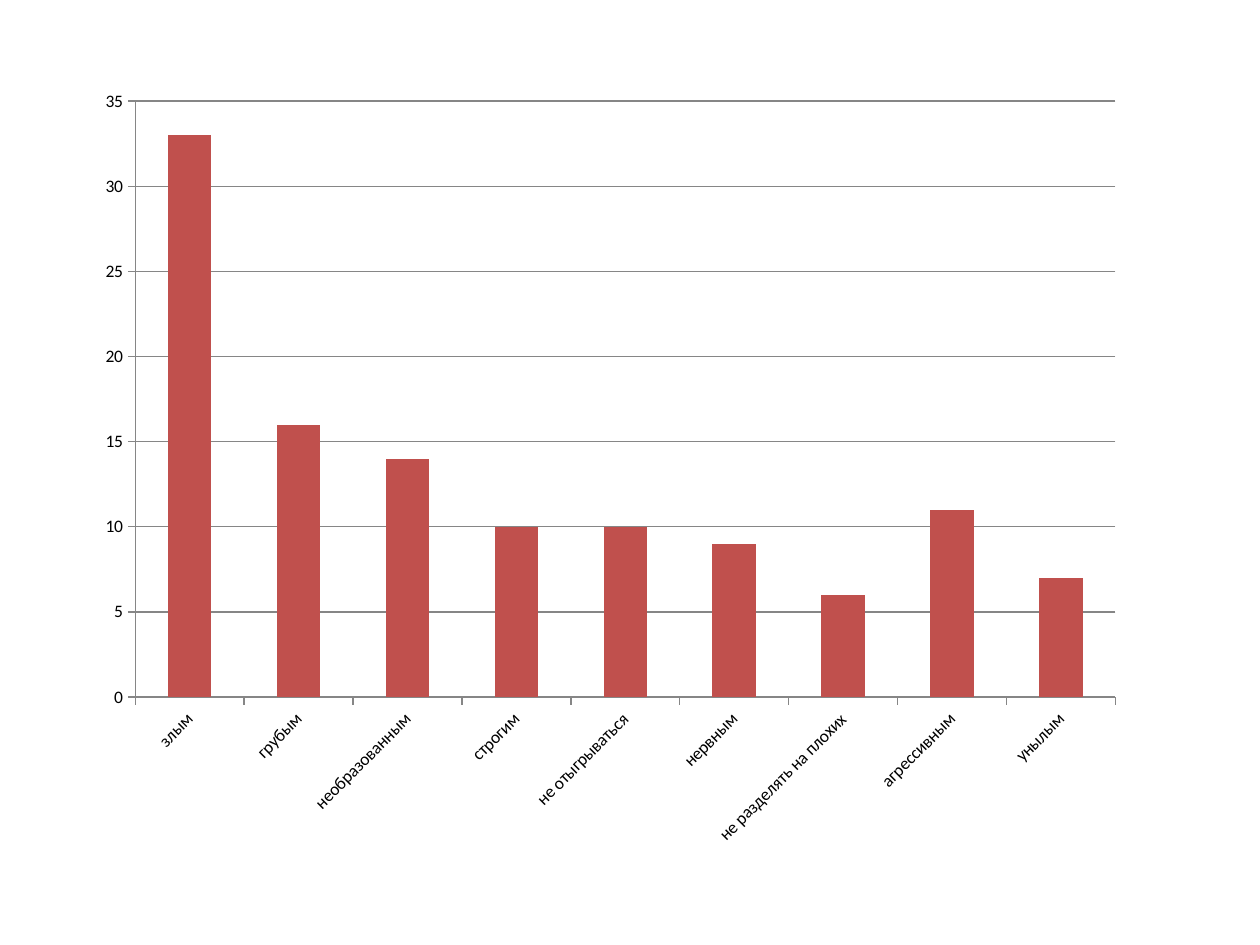
from pptx import Presentation
from pptx import util as u
from pptx.chart import data as chart_data
from pptx.dml import color as c
from pptx.enum import chart as e


def rgb(value):
    return c.RGBColor.from_string(value)


class Deck:
    """Holds the presentation, its style and the current slide."""

    font, size = "Calibri", 10
    text_color, line_color, bar_color = "000000", "868686", "C0504D"

    def __init__(self, width, height):
        self.presentation = Presentation()
        self.presentation.slide_width = u.Inches(width)
        self.presentation.slide_height = u.Inches(height)

    def add_slide(self):
        self.slide = self.presentation.slides.add_slide(self.presentation.slide_layouts[6])

    def place(self, left, top, width, height):
        across, down = self.presentation.slide_width, self.presentation.slide_height
        return int(left * across), int(top * down), int(width * across), int(height * down)

    def style_line(self, line):
        line.color.rgb = rgb(self.line_color)
        line.width = u.Pt(0.75)

    def style_axis(self, axis):
        axis.major_tick_mark = e.XL_TICK_MARK.OUTSIDE
        axis.minor_tick_mark = e.XL_TICK_MARK.NONE
        self.style_line(axis.format.line)

    def column_chart(self, name, values, box, maximum, step):
        data = chart_data.CategoryChartData()
        data.categories = list(values)
        data.add_series(name, list(values.values()))
        kind = e.XL_CHART_TYPE.COLUMN_STACKED
        chart = self.slide.shapes.add_chart(kind, *self.place(*box), data).chart
        chart.has_legend = chart.has_title = False
        chart.font.name, chart.font.size = self.font, u.Pt(self.size)
        chart.font.color.rgb = rgb(self.text_color)

        plot = chart.plots[0]
        plot.vary_by_categories = False
        plot.gap_width, plot.overlap = 150, 100
        fill = plot.series[0].format.fill
        fill.solid()
        fill.fore_color.rgb = rgb(self.bar_color)

        labels, scale = chart.category_axis, chart.value_axis
        for axis in (labels, scale):
            self.style_axis(axis)
        labels.tick_labels.font.size = u.Pt(self.size)
        labels._element.txPr.bodyPr.set("rot", str(-45 * 60000))
        scale.minimum_scale, scale.maximum_scale, scale.major_unit = 0, maximum, step
        scale.has_major_gridlines = True
        self.style_line(scale.major_gridlines.format.line)

    def save(self):
        self.presentation.save("out.pptx")


def main():
    traits = {
        "злым": 33,
        "грубым": 16,
        "необразованным": 14,
        "строгим": 10,
        "не отыгрываться": 10,
        "нервным": 9,
        "не разделять на плохих": 6,
        "агрессивным": 11,
        "унылым": 7,
    }
    deck = Deck(10, 7.5)
    deck.add_slide()
    deck.column_chart("Series 1", traits, (0.067, 0.08, 0.835, 0.83), 35, 5)
    deck.save()


if __name__ == "__main__":
    main()
